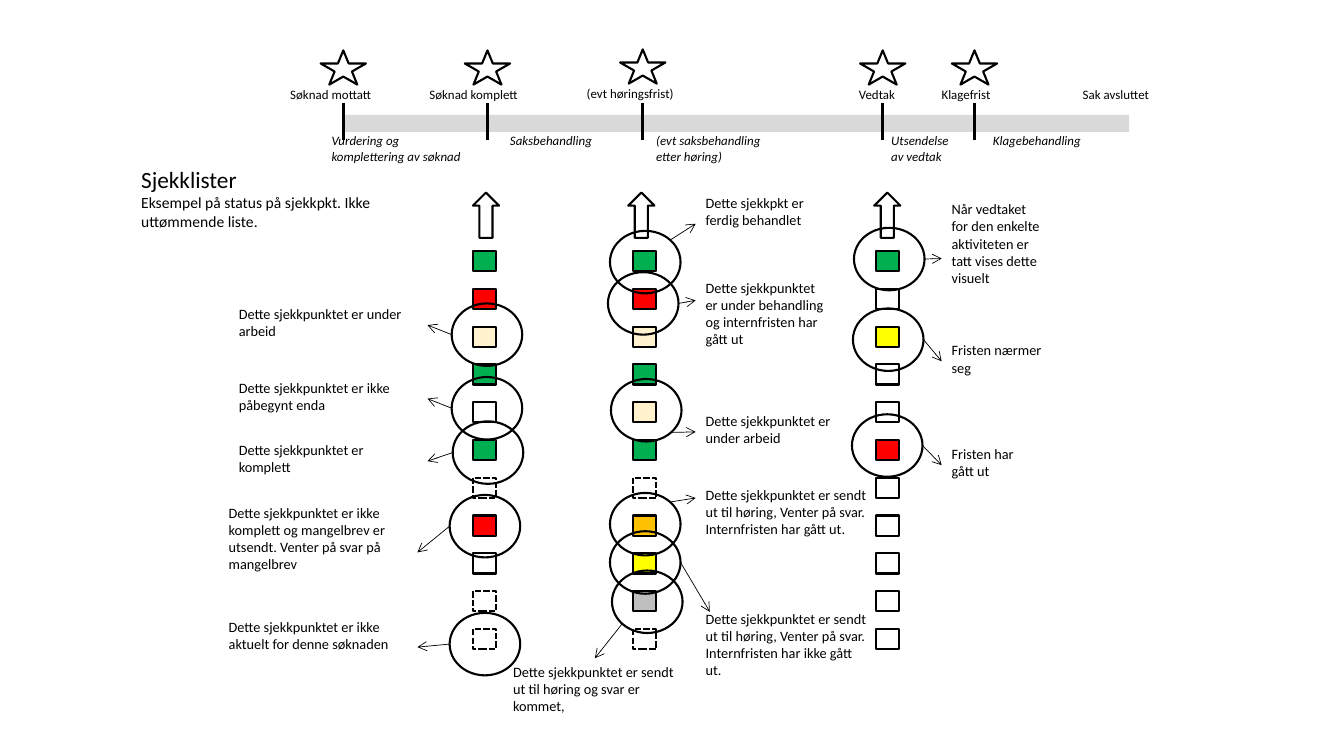
from lxml import etree
from pptx import Presentation
from pptx.dml.color import RGBColor
from pptx.enum.dml import MSO_LINE
from pptx.enum.shapes import MSO_CONNECTOR, MSO_SHAPE
from pptx.enum.text import MSO_ANCHOR, PP_ALIGN
from pptx.oxml.ns import qn
from pptx.util import Inches, Pt

RECT, OVAL, STAR = MSO_SHAPE.RECTANGLE, MSO_SHAPE.OVAL, MSO_SHAPE.STAR_5_POINT
DOWN = MSO_SHAPE.DOWN_ARROW
STRAIGHT = MSO_CONNECTOR.STRAIGHT
DASH = MSO_LINE.SQUARE_DOT
TOP, LEFT = MSO_ANCHOR.TOP, PP_ALIGN.LEFT

FONT, BLACK, WHITE = "Calibri", "000000", "FFFFFF"
# Status codes of the check points; "-" is a dashed box
STATUS = {"G": "00B050", "R": "FF0000", "C": "FFF2CC", "Y": "FFFF00",
          "O": "FFC000", "S": "BFBFBF", "W": WHITE, "-": WHITE}
RING_W, RING_H = 0.7, 0.62
# Where an arrow leaves its ring, as offsets from the ring's corner
PORT = {"left": (0, 0.31), "right": (0.7, 0.31), "upper": (0.6, 0.09),
        "lower": (0.6, 0.53), "below": (0.1, 0.53)}

# Star left, star top, label left, label width, label
STAGES = [
    (0, 0.01, -0.4, 1.21, "Søknad mottatt"),
    (1.43, 0.01, 0.98, 1.29, "Søknad komplett"),
    (2.97, 0, 2.54, 1.27, "(evt høringsfrist)"),
    (5.35, 0.01, 5.24, 0.67, "Vedtak"),
    (6.26, 0.01, 6.06, 0.82, "Klagefrist"),
]
# Left, width, lines
PHASES = [
    (0.01, 1.77, ["Vurdering og", "komplettering av søknad"]),
    (1.78, 1.2, ["Saksbehandling"]),
    (3.23, 1.47, ["(evt saksbehandling", "etter høring)"]),
    (5.56, 0.95, ["Utsendelse", "av vedtak"]),
    (6.57, 1.27, ["Klagebehandling"]),
]
# Column left, arrow left, statuses from top to bottom
COLUMNS = [
    (4.69, 4.69, "GRCGWG-RW--"),
    (6.28, 6.23, "GRCGCG-OYS-"),
    (8.69, 8.67, "GWYWWRWWWWW"),
]
# Ring corner, port, text box, text, arrow end (box side or point)
NOTES = [
    ((4.48, 3.01), "left", (2.27, 2.98, 1.97, 0.49),
     "Dette sjekkpunktet er under arbeid", 3),
    ((4.48, 3.74), "left", (2.27, 3.71, 1.97, 0.49),
     "Dette sjekkpunktet er ikke påbegynt enda", 3),
    ((4.49, 4.18), "left", (2.27, 4.33, 1.97, 0.49),
     "Dette sjekkpunktet er komplett", 3),
    ((4.46, 4.91), "left", (2.17, 4.95, 1.97, 1.06),
     "Dette sjekkpunktet er ikke komplett og mangelbrev er utsendt. "
     "Venter på svar på mangelbrev", 3),
    ((4.46, 6.08), "left", (2.17, 6.08, 1.97, 0.68),
     "Dette sjekkpunktet er ikke aktuelt for denne søknaden", 3),
    ((6.05, 2.29), "upper", (6.9, 1.88, 1.28, 0.68),
     "Dette sjekkpkt er ferdig behandlet", 1),
    ((6.03, 2.7), "right", (6.9, 2.72, 1.37, 1.25),
     "Dette sjekkpunktet er under behandling og internfristen har gått ut",
     (6.9, 2.98)),
    ((6.06, 3.76), "lower", (6.9, 4.04, 1.56, 0.49),
     "Dette sjekkpunktet er under arbeid", 1),
    ((6.05, 4.89), "upper", (6.9, 4.77, 1.82, 1.06),
     "Dette sjekkpunktet er sendt ut til høring, Venter på svar. "
     "Internfristen har gått ut.", (6.9, 4.94)),
    ((6.05, 5.27), "right", (6.9, 6, 1.82, 1.06),
     "Dette sjekkpunktet er sendt ut til høring, Venter på svar. "
     "Internfristen har ikke gått ut.", (7.04, 6.07)),
    ((6.07, 5.66), "below", (4.99, 6.53, 1.82, 0.68),
     "Dette sjekkpunktet er sendt ut til høring og svar er kommet,", 0),
    ((8.47, 2.26), "right", (9.34, 1.94, 1.12, 1.25),
     "Når vedtaket for den enkelte aktiviteten er tatt vises dette visuelt", 1),
    ((8.46, 3.06), "right", (9.34, 3.34, 1.25, 0.49), "Fristen nærmer seg", 1),
    ((8.45, 4.11), "right", (9.34, 4.37, 1, 0.49), "Fristen har gått ut", 1),
]


def color(code):
    return RGBColor.from_string(code)


def shape(slide, kind, box, fill=None, line=BLACK):
    item = slide.shapes.add_shape(kind, *map(Inches, box))
    item.shadow.inherit = False
    if fill:
        item.fill.solid()
        item.fill.fore_color.rgb = color(fill)
    else:
        item.fill.background()
    if line:
        item.line.color.rgb = color(line)
        item.line.width = Pt(1.5)
    else:
        item.line.fill.background()
    return item


def line(slide, start, end, width):
    item = slide.shapes.add_connector(STRAIGHT, *map(Inches, (*start, *end)))
    item.line.color.rgb = color(BLACK)
    item.line.width = Pt(width)
    etree.SubElement(item._element.spPr, qn("a:effectLst"))
    return item


def write(frame, rows, italic=False):
    """Fill a text frame with (text, size) rows."""
    frame.word_wrap = True
    frame.vertical_anchor = TOP
    for i, (words, size) in enumerate(rows):
        para = frame.add_paragraph() if i else frame.paragraphs[0]
        para.alignment = LEFT
        para.line_spacing = 1.0
        run = para.add_run()
        run.text = words
        run.font.name, run.font.size = FONT, Pt(size)
        run.font.italic = italic
        run.font.color.rgb = color(BLACK)


def text(slide, box, rows, italic=False):
    item = slide.shapes.add_textbox(*map(Inches, box))
    write(item.text_frame, rows, italic)
    return item


def heading(slide, box):
    title = slide.shapes.title
    title.left, title.top, title.width, title.height = map(Inches, box)
    write(title.text_frame, [
        ("Sjekklister", 16.6),
        ("Eksempel på status på sjekkpkt. Ikke uttømmende liste.", 11.1)])


def timeline(slide, x, y):
    # Bar
    shape(slide, RECT, (x + 0.24, y + 0.65, 7.78, 0.17), "D9D9D9", None)
    # Milestones
    for left, top, label, width, words in STAGES:
        shape(slide, STAR, (x + left, y + top, 0.45, 0.34), WHITE)
        mid = x + left + 0.225
        line(slide, (mid, y + 0.53), (mid, y + 0.9), 2.25)
        text(slide, (x + label, y + top + 0.31, width, 0.28), [(words, 9.2)])
    text(slide, (x + 7.46, y + 0.32, 1.03, 0.28), [("Sak avsluttet", 9.2)])
    # Phases
    for left, width, rows in PHASES:
        text(slide, (x + left, y + 0.78, width, 0.1 + 0.18 * len(rows)),
             [(row, 9.2) for row in rows], True)


def column(slide, x, y, tip, codes):
    for i, code in enumerate(codes):
        item = shape(slide, RECT, (x, y + i * 0.375, 0.23, 0.2), STATUS[code])
        if code == "-":
            item.line.dash_style = DASH
    arrow = shape(slide, DOWN, (tip, y - 0.58, 0.26, 0.45), WHITE)
    arrow.rotation = 180


def note(slide, ring, port, box, words, end):
    shape(slide, OVAL, (*ring, RING_W, RING_H))
    label = text(slide, box, [(words, 10.2)])
    dx, dy = PORT[port]
    point = end if isinstance(end, tuple) else box[:2]
    arrow = line(slide, (ring[0] + dx, ring[1] + dy), point, 0.5)
    if point is not end:
        arrow.end_connect(label, end)
    etree.SubElement(arrow.line._get_or_add_ln(), qn("a:tailEnd"), type="arrow")


def main():
    deck = Presentation()
    deck.slide_width, deck.slide_height = Inches(13.33), Inches(7.5)
    slide = deck.slides.add_slide(deck.slide_layouts[5])
    heading(slide, (1.3, 1.59, 2.82, 0.84))
    timeline(slide, 3.18, 0.49)
    for x, tip, codes in COLUMNS:
        column(slide, x, 2.49, tip, codes)
    for item in NOTES:
        note(slide, *item)
    deck.save("out.pptx")


if __name__ == "__main__":
    main()
